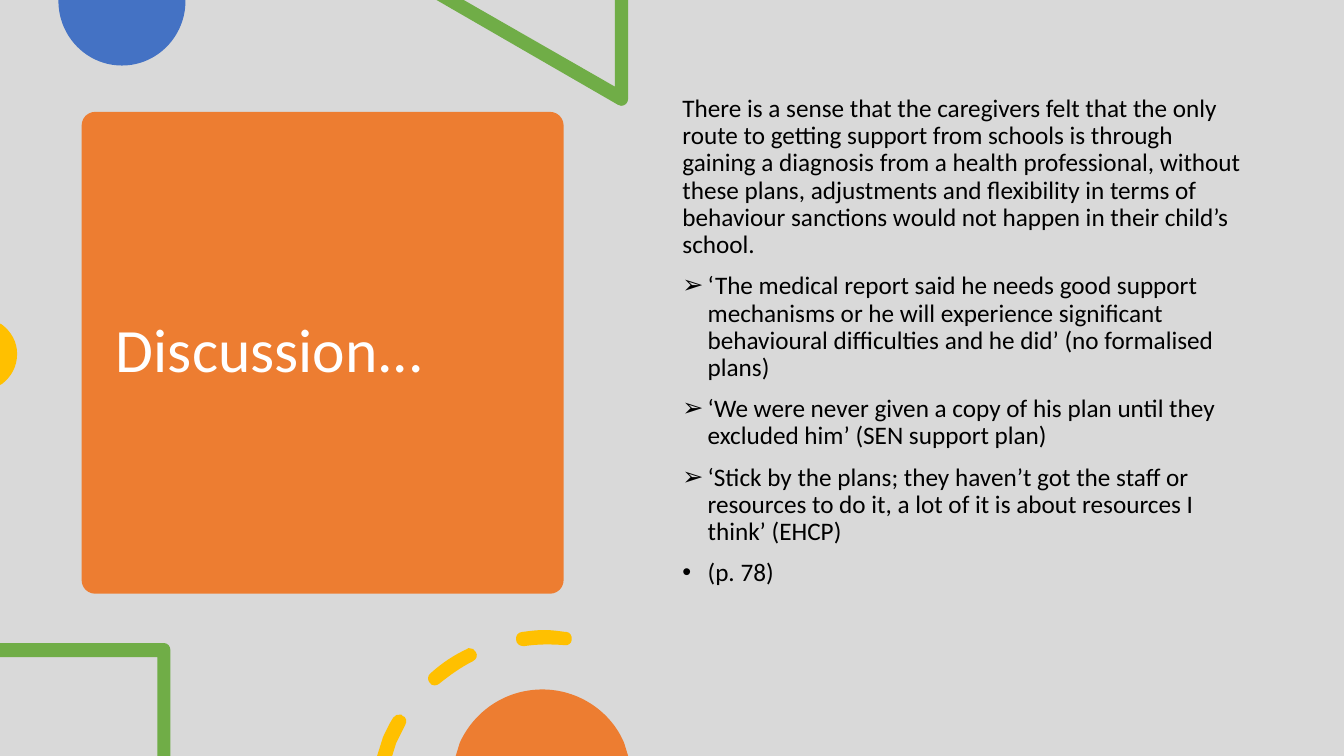
from pptx import Presentation
from pptx.dml.color import RGBColor
from pptx.enum.shapes import MSO_SHAPE
from pptx.enum.text import MSO_ANCHOR, MSO_AUTO_SIZE, PP_ALIGN
from pptx.util import Inches, Pt
from lxml import etree

GREY = RGBColor(0xD9, 0xD9, 0xD9)
ORANGE = RGBColor(0xED, 0x7D, 0x31)
BLUE = RGBColor(0x44, 0x72, 0xC4)
GREEN = RGBColor(0x70, 0xAD, 0x47)
GOLD = RGBColor(0xFF, 0xC0, 0x00)
WHITE = RGBColor(0xFF, 0xFF, 0xFF)
BLACK = RGBColor(0, 0, 0)
FONT = "Calibri"
MARK_FONT = "Arial"

TITLE = "Discussion..."
BODY = [
    ("", "There is a sense that the caregivers felt that the only route to getting support "
         "from schools is through gaining a diagnosis from a health professional, without these "
         "plans, adjustments and flexibility in terms of behaviour sanctions would not happen "
         "in their child’s school."),
    ("➢", "‘The medical report said he needs good support mechanisms or he will experience "
          "significant behavioural difficulties and he did’ (no formalised plans)"),
    ("➢", "‘We were never given a copy of his plan until they excluded him’ (SEN support plan)"),
    ("➢", "‘Stick by the plans; they haven’t got the staff or resources to do it, "
          "a lot of it is about resources I think’ (EHCP)"),
    ("•", "(p. 78)"),
]

UPPER = [
    (BLUE, [[(1.84, 0), (0.58, 0), (0.58, 0.01), (0.58, 0.36, 0.86, 0.65, 1.21, 0.65),
             (1.56, 0.65, 1.84, 0.36, 1.84, 0.01)]]),
    (GREEN, [[(6.23, 0), (6.1, 0), (6.1, 0.86), (4.6, 0), (4.33, 0), (6.13, 1.04),
              (6.14, 1.05, 6.15, 1.05, 6.16, 1.05), (6.2, 1.05, 6.23, 1.02, 6.23, 0.98)]]),
    (GOLD, [[(0, 3.21), (0, 3.82), (0.02, 3.81), (0.11, 3.74, 0.17, 3.64, 0.17, 3.51),
             (0.17, 3.39, 0.11, 3.29, 0.02, 3.22)]]),
]
LOWER = [
    (GREEN, [[(1.63, 6.38), (0, 6.38), (0, 6.52), (1.56, 6.52), (1.56, 7.5), (1.69, 7.5),
              (1.69, 6.45), (1.69, 6.41, 1.66, 6.38, 1.63, 6.38)]]),
    (GOLD, [
        [(3.97, 7.09), (3.94, 7.08, 3.92, 7.1, 3.9, 7.12), (3.86, 7.18, 3.83, 7.25, 3.8, 7.31),
         (3.74, 7.5), (3.89, 7.5), (3.93, 7.37), (3.96, 7.31, 3.99, 7.25, 4.02, 7.19),
         (4.04, 7.16, 4.03, 7.11, 3.99, 7.1), (3.99, 7.09, 3.98, 7.09, 3.97, 7.09)],
        [(4.65, 6.43), (4.65, 6.43, 4.64, 6.43, 4.63, 6.44), (4.5, 6.5, 4.38, 6.58, 4.27, 6.68),
         (4.24, 6.7, 4.24, 6.75, 4.26, 6.77), (4.27, 6.79, 4.29, 6.8, 4.31, 6.8), (4.31, 6.8),
         (4.33, 6.8, 4.35, 6.79, 4.36, 6.78), (4.46, 6.7, 4.57, 6.62, 4.69, 6.56),
         (4.73, 6.54, 4.74, 6.5, 4.72, 6.47), (4.71, 6.44, 4.68, 6.43, 4.65, 6.43)],
        [(5.4, 6.25), (5.32, 6.25, 5.25, 6.26, 5.18, 6.27), (5.14, 6.27, 5.11, 6.31, 5.12, 6.35),
         (5.12, 6.38, 5.15, 6.41, 5.19, 6.41), (5.19, 6.41, 5.19, 6.41, 5.2, 6.41),
         (5.33, 6.39, 5.46, 6.39, 5.6, 6.4), (5.63, 6.41, 5.67, 6.38, 5.67, 6.35),
         (5.68, 6.31, 5.65, 6.27, 5.62, 6.27), (5.62, 6.27, 5.61, 6.27, 5.61, 6.27),
         (5.54, 6.26, 5.47, 6.25, 5.4, 6.25)],
    ]),
    (ORANGE, [[(5.38, 6.84), (5.01, 6.84, 4.7, 7.06, 4.56, 7.37), (4.52, 7.5), (6.23, 7.5),
               (6.19, 7.37), (6.06, 7.06, 5.74, 6.84, 5.38, 6.84)]]),
]


def paint(shape, color):
    shape.fill.solid()
    shape.fill.fore_color.rgb = color
    shape.line.fill.background()
    shape.shadow.inherit = False


def curve(shape, loops):
    segs = [seg for loop in loops for seg in loop[1:]]
    lines = list(shape.element.iter("{*}lnTo"))
    for line, seg in zip(lines, segs):
        if len(seg) == 2:
            continue
        space = line.tag.split("}")[0] + "}"
        bend = etree.Element(space + "cubicBezTo")
        for x, y in zip(seg[::2], seg[1::2]):
            etree.SubElement(bend, space + "pt", x=str(Inches(x) - shape.left),
                             y=str(Inches(y) - shape.top))
        line.getparent().replace(line, bend)


def draw(shapes, color, loops):
    ends = [[(Inches(seg[-2]), Inches(seg[-1])) for seg in loop] for loop in loops]
    pen = shapes.build_freeform(*ends[0][0])
    for i, (start, *rest) in enumerate(ends):
        if i:
            pen.move_to(*start)
        pen.add_line_segments(rest, close=True)
    shape = pen.convert_to_shape()
    curve(shape, loops)
    paint(shape, color)


def style(para, size, color):
    para.alignment = PP_ALIGN.LEFT
    para.line_spacing = 0.9
    para.font.name = FONT
    para.font.size = Pt(size)
    para.font.color.rgb = color


def mark(para, sign):
    props = para._p.get_or_add_pPr()
    props.set("marL", str(Inches(0.25)))
    props.set("indent", str(Inches(-0.25)))
    space = props.tag.split("}")[0] + "}"
    tail = props.find(space + "defRPr")
    tail.addprevious(etree.Element(space + "buFont", typeface=MARK_FONT))
    tail.addprevious(etree.Element(space + "buChar", char=sign))


def head(shapes):
    title = shapes.title
    title.left, title.top = Inches(1.05), Inches(1.22)
    title.width, title.height = Inches(4.31), Inches(4.56)
    frame = title.text_frame
    frame.text = TITLE
    frame.auto_size = MSO_AUTO_SIZE.NONE
    frame.vertical_anchor = MSO_ANCHOR.MIDDLE
    style(frame.paragraphs[0], 44, WHITE)

    card = shapes.add_shape(MSO_SHAPE.ROUNDED_RECTANGLE, Inches(0.81), Inches(1.11),
                            Inches(4.78), Inches(4.78))
    card.adjustments[0] = 0.028
    paint(card, ORANGE)
    title.element.addprevious(card.element)


def write(shapes):
    box = shapes.add_textbox(Inches(6.67), Inches(0.9), Inches(5.75), Inches(5.35))
    frame = box.text_frame
    frame.word_wrap = True
    for i, (sign, text) in enumerate(BODY):
        para = frame.add_paragraph() if i else frame.paragraphs[0]
        para.text = text
        para.space_before = Pt(10)
        style(para, 18, BLACK)
        if sign:
            mark(para, sign)


def main():
    deck = Presentation()
    deck.slide_width, deck.slide_height = Inches(13.33), Inches(7.5)
    slide = deck.slides.add_slide(deck.slide_layouts[5])
    slide.background.fill.solid()
    slide.background.fill.fore_color.rgb = GREY
    shapes = slide.shapes
    head(shapes)
    for color, loops in UPPER:
        draw(shapes, color, loops)
    write(shapes)
    for color, loops in LOWER:
        draw(shapes, color, loops)
    deck.save("out.pptx")


if __name__ == "__main__":
    main()
